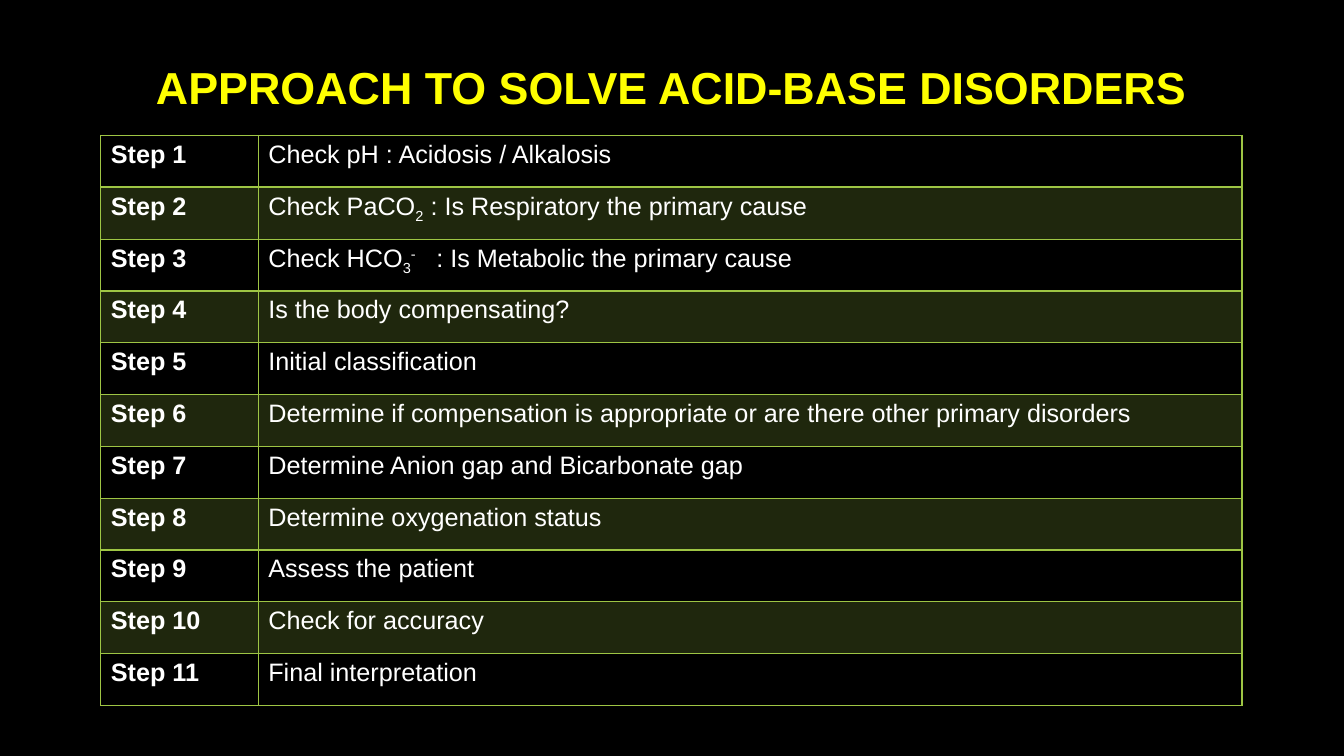
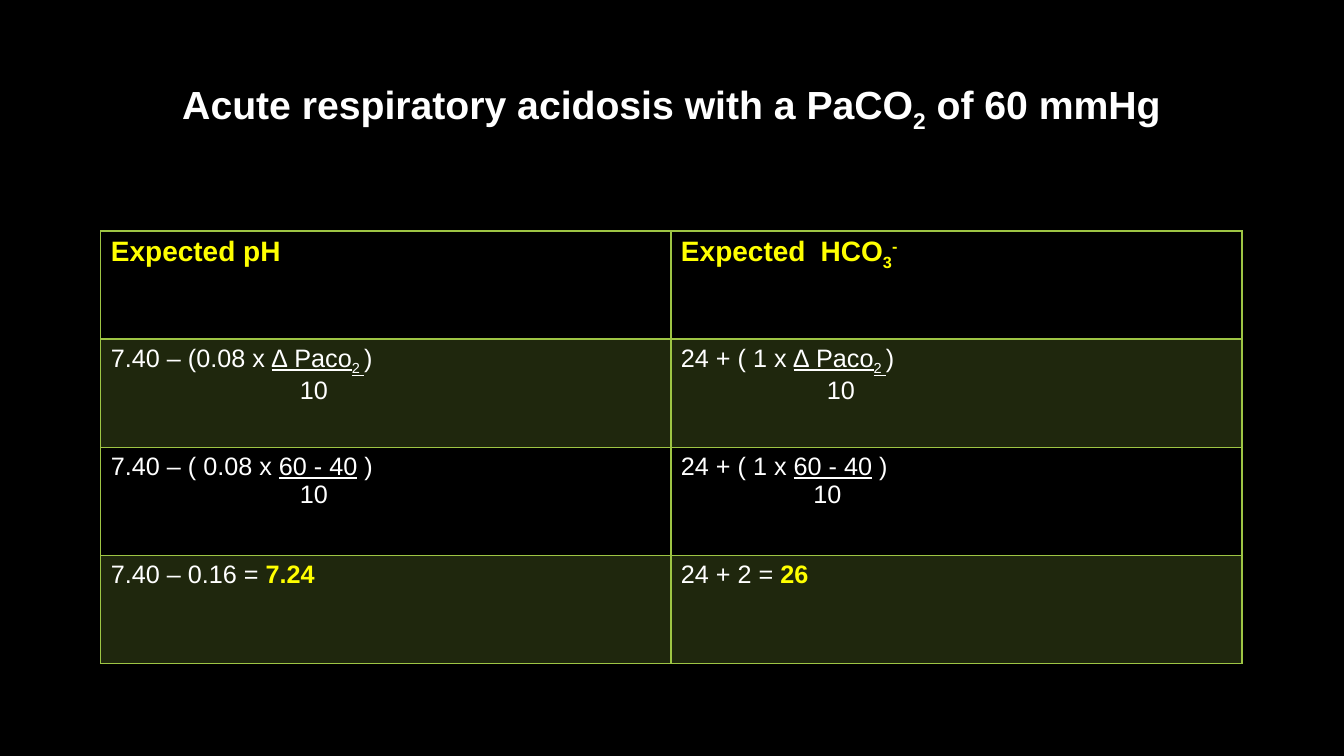
from dataclasses import dataclass
from typing import NamedTuple

from lxml import etree
from pptx import Presentation
from pptx.dml.color import RGBColor
from pptx.enum.text import MSO_ANCHOR as Anchor, MSO_AUTO_SIZE as AutoSize, PP_ALIGN as Align
from pptx.oxml.ns import qn
from pptx.util import Emu, Pt

PX = 9525  # EMU in one px, 96 px to the inch
LEFT, WIDTH = 96, 1087
SUB, SUP = -25000, 30000


@dataclass(frozen=True)
class Theme:
    font: str = "Arial"
    background: str = "000000"
    text: str = "FFFFFF"
    accent: str = "FFFF00"
    green: str = "9EC544"
    band_alpha: int = 20000
    title_size: int = 32
    subtitle_size: int = 28
    header_size: int = 20
    body_size: int = 18


THEME = Theme()


class Run(NamedTuple):
    text: str
    base: int = 0
    underline: bool = False
    bold: bool = False
    accent: bool = False


class Para(NamedTuple):
    runs: list[Run]
    indent: int = 0
    tab: int = 0
    size: int = THEME.body_size


Cell = list[Para]


class Title(NamedTuple):
    runs: list[Run]
    top: int
    height: int
    size: int
    anchor: Anchor
    inset: int


class Grid(NamedTuple):
    top: int
    height: int
    columns: list[int]
    rows: list[list[Cell]]


def px(n: int) -> Emu:
    return Emu(n * PX)


# Text
def write_para(p, para: Para) -> None:
    pPr = p._p.get_or_add_pPr()
    if para.indent:
        pPr.set("marL", str(px(para.indent)))
    if para.tab:
        tabs = etree.SubElement(pPr, qn("a:tabLst"))
        etree.SubElement(tabs, qn("a:tab"), pos=str(px(para.tab)), algn="l")
    for run in para.runs:
        r = p.add_run()
        r.text = run.text
        look = {"name": THEME.font, "size": Pt(para.size),
                "bold": run.bold, "underline": run.underline}
        for name, value in look.items():
            setattr(r.font, name, value)
        r.font.color.rgb = RGBColor.from_string(THEME.accent if run.accent else THEME.text)
        if run.base:
            r._r.get_or_add_rPr().set("baseline", str(run.base))


def write_cell(tf, paras: Cell) -> None:
    for i, para in enumerate(paras):
        write_para(tf.add_paragraph() if i else tf.paragraphs[0], para)


def draw_title(s, title: Title) -> None:
    sp = s.shapes.title
    box = {"left": LEFT, "top": title.top, "width": WIDTH, "height": title.height}
    for name, value in box.items():
        setattr(sp, name, px(value))
    tf = sp.text_frame
    frame = {"word_wrap": True, "auto_size": AutoSize.NONE,
             "vertical_anchor": title.anchor, "margin_top": px(title.inset)}
    for name, value in frame.items():
        setattr(tf, name, value)
    p = tf.paragraphs[0]
    p.alignment, p.line_spacing = Align.CENTER, 0.9
    write_para(p, Para(title.runs, size=title.size))


# Tables
def style_cell(cell, row: int) -> None:
    tcPr = cell._tc.get_or_add_tcPr()
    for side in "LRTB":
        width = Pt(2 if row == 0 and side == "B" else 1)
        ln = etree.SubElement(tcPr, qn(f"a:ln{side}"), w=str(width))
        solid = etree.SubElement(ln, qn("a:solidFill"))
        etree.SubElement(solid, qn("a:srgbClr"), val=THEME.green)
    banded = row % 2 == 1
    cell.fill.solid()
    cell.fill.fore_color.rgb = RGBColor.from_string(THEME.green if banded else THEME.background)
    if banded:
        color = tcPr.find(qn("a:solidFill")).find(qn("a:srgbClr"))
        etree.SubElement(color, qn("a:alpha"), val=str(THEME.band_alpha))


def draw_grid(s, grid: Grid) -> None:
    frame = s.shapes.add_table(len(grid.rows), len(grid.columns), px(LEFT), px(grid.top),
                               px(sum(grid.columns)), px(grid.height))
    table = frame.table
    table.first_row = table.horz_banding = False
    for column, width in zip(table.columns, grid.columns):
        column.width = px(width)
    for i, cells in enumerate(grid.rows):
        table.rows[i].height = px(grid.height) // len(grid.rows)
        for j, paras in enumerate(cells):
            cell = table.cell(i, j)
            style_cell(cell, i)
            write_cell(cell.text_frame, paras)


# Content of the steps slide
def plain(text: str) -> Para:
    return Para([Run(text)])


STEPS = [
    plain("Check pH : Acidosis / Alkalosis"),
    Para([Run("Check PaCO"), Run("2", SUB), Run(" : Is Respiratory the primary cause")]),
    Para([Run("Check HCO"), Run("3", SUB), Run("-", SUP),
          Run("\t: Is Metabolic the primary cause")], tab=160),
    plain("Is the body compensating?"),
    plain("Initial classification"),
    plain("Determine if compensation is appropriate or are there other primary disorders"),
    plain("Determine Anion gap and Bicarbonate gap"),
    plain("Determine oxygenation status"),
    plain("Assess the patient"),
    plain("Check for accuracy"),
    plain("Final interpretation"),
]
STEP_ROWS = [[[Para([Run(f"Step {n}", bold=True)])], [step]]
             for n, step in enumerate(STEPS, 1)]


# Content of the worked example
def header(*parts: tuple, tab: int = 0) -> Cell:
    runs = [Run(text, base, bold=True, accent=True) for text, base in parts]
    return [Para(runs, tab=tab, size=THEME.header_size)]


def fraction(lead: str, numerator: list[Run], close: str, indent: int) -> Cell:
    return [Para([Run(lead), *numerator, Run(close)]), Para([Run("10")], indent=indent)]


def result(lead: str, value: str) -> Cell:
    return [Para([Run(lead), Run(value, bold=True, accent=True)])]


DELTA = [Run("∆ Paco", underline=True), Run("2 ", SUB, underline=True)]
CHANGE = [Run("60 - 40", underline=True)]
EXAMPLE_ROWS = [
    [header(("Expected pH", 0)),
     header(("Expected\tHCO", 0), ("3", SUB), ("-", SUP), tab=133)],
    [fraction("7.40 – (0.08 x ", DELTA, ")", 180), fraction("24 + ( 1 x ", DELTA, ")", 139)],
    [fraction("7.40 – ( 0.08 x ", CHANGE, " )", 180), fraction("24 + ( 1 x ", CHANGE, " )", 126)],
    [result("7.40 – 0.16 = ", "7.24"), result("24 + 2 = ", "26")],
]

SLIDES = [
    (Title([Run("APPROACH TO SOLVE ACID-BASE DISORDERS", bold=True, accent=True)],
           36, 100, THEME.title_size, Anchor.MIDDLE, 5),
     Grid(129, 543, [150, 937], STEP_ROWS)),
    (Title([Run("Acute respiratory acidosis with a PaCO", bold=True),
            Run("2", SUB, bold=True), Run(" of 60 mmHg", bold=True)],
           64, 104, THEME.subtitle_size, Anchor.TOP, 13),
     Grid(220, 412, [543, 544], EXAMPLE_ROWS)),
]


def main() -> None:
    prs = Presentation()
    prs.slide_width, prs.slide_height = px(1280), px(720)
    fill = prs.slide_master.background.fill
    fill.solid()
    fill.fore_color.rgb = RGBColor.from_string(THEME.background)
    title_only = prs.slide_layouts.get_by_name("Title Only")
    for title, grid in SLIDES:
        s = prs.slides.add_slide(title_only)
        draw_title(s, title)
        draw_grid(s, grid)
    prs.save("out.pptx")


if __name__ == "__main__":
    main()
